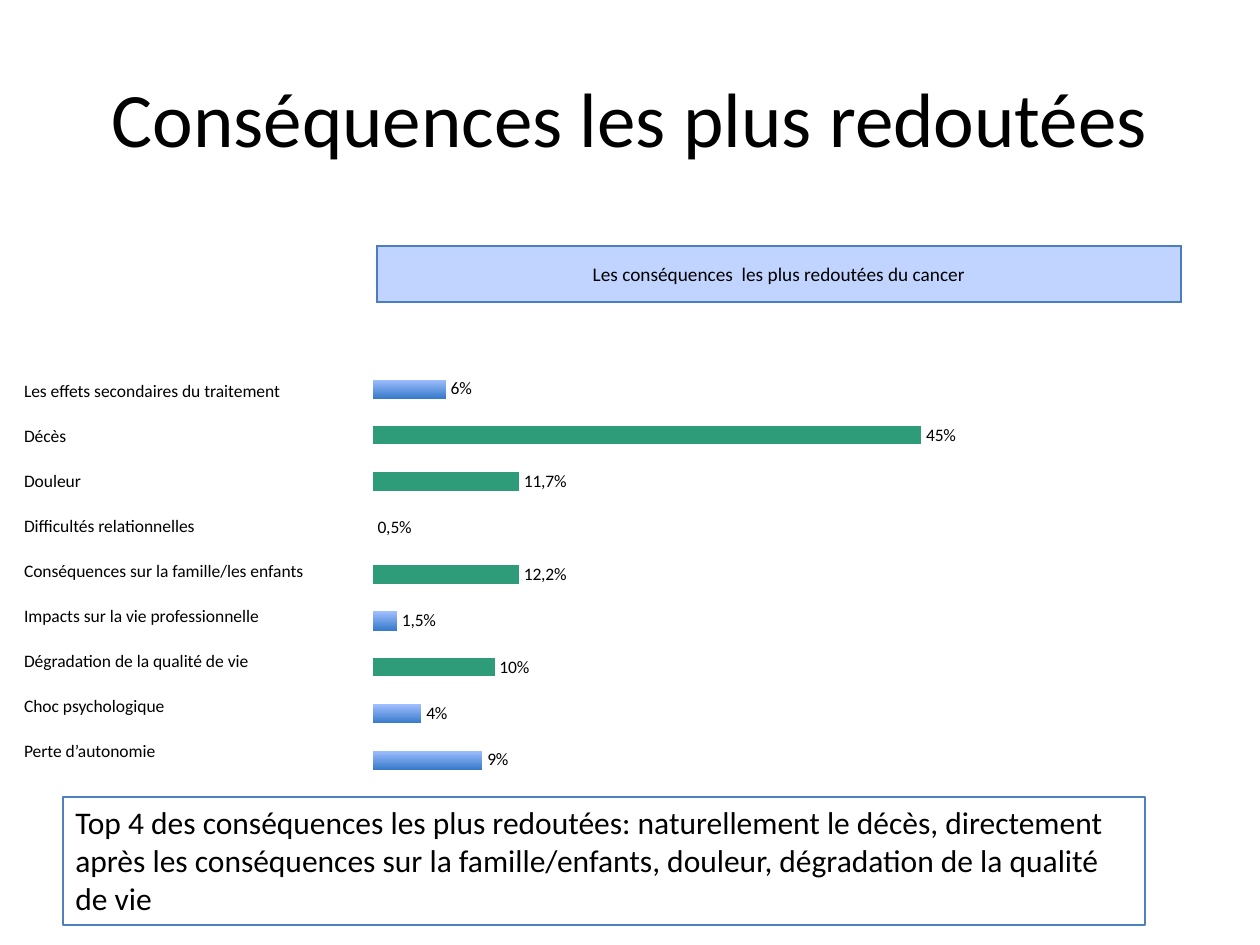
from lxml import etree
from pptx import Presentation
from pptx.chart.data import CategoryChartData
from pptx.dml.color import RGBColor
from pptx.enum.chart import XL_CHART_TYPE, XL_LABEL_POSITION
from pptx.enum.shapes import MSO_SHAPE
from pptx.enum.text import MSO_ANCHOR, PP_ALIGN
from pptx.oxml import parse_xml
from pptx.oxml.ns import qn
from pptx.util import Pt

BARS = XL_CHART_TYPE.BAR_CLUSTERED
OUTSIDE = XL_LABEL_POSITION.OUTSIDE_END
RECT = MSO_SHAPE.RECTANGLE
TOP, MIDDLE, BOTTOM = MSO_ANCHOR.TOP, MSO_ANCHOR.MIDDLE, MSO_ANCHOR.BOTTOM
LEFT, CENTER = PP_ALIGN.LEFT, PP_ALIGN.CENTER

BLACK = RGBColor(0x00, 0x00, 0x00)
WHITE = RGBColor(0xFF, 0xFF, 0xFF)
BLUE = RGBColor(0x4F, 0x81, 0xBD)
EDGE = RGBColor(0x4B, 0x7E, 0xBC)
PALE = RGBColor(0xC0, 0xD4, 0xFF)
GREEN = RGBColor(0x2E, 0x9C, 0x79)
LIGHT = RGBColor(0xA0, 0xBF, 0xFF)
DEEP = RGBColor(0x3A, 0x7C, 0xCB)

FONT = "Calibri"
ROWS = [
    ("Les effets secondaires du traitement", 6, "6%"),
    ("Décès", 45, None),
    ("Douleur", 12, "11,7%"),
    ("Difficultés relationnelles", 0, "0,5%"),
    ("Conséquences sur la famille/les enfants", 12, "12,2%"),
    ("Impacts sur la vie professionnelle", 2, "1,5%"),
    ("Dégradation de la qualité de vie", 10, None),
    ("Choc psychologique", 4, "4%"),
    ("Perte d’autonomie", 9, "9%"),
]
NOTE = (
    "Top 4 des conséquences les plus redoutées: naturellement le décès, "
    "directement après les conséquences sur la famille/enfants, douleur, "
    "dégradation de la qualité de vie"
)


def px(n):
    return round(n * 914400 / 126)


def box(*sides):
    return [px(n) for n in sides]


def assign(item, values):
    for name, value in values.items():
        setattr(item, name, value)


def style(font, size):
    assign(font, {"name": FONT, "size": Pt(size)})
    font.color.rgb = BLACK


def write(frame, text, size, align=LEFT):
    para = frame.paragraphs[0]
    para.alignment = align
    run = para.add_run()
    run.text = text
    style(run.font, size)


def add_title(slide, text):
    frame = slide.shapes.add_textbox(*box(63, 38, 1134, 157)).text_frame
    assign(frame, {"word_wrap": True, "vertical_anchor": MIDDLE})
    write(frame, text, 44, CENTER)


def add_grid(slide, place, texts, size, fill, anchor, align):
    table = slide.shapes.add_table(len(texts), 1, *box(*place)).table
    assign(table, {"first_row": False, "horz_banding": False})
    for row, text in enumerate(texts):
        cell = table.cell(row, 0)
        assign(cell, {
            "margin_left": px(1), "margin_right": px(1),
            "margin_top": px(1), "margin_bottom": 0,
            "vertical_anchor": anchor,
        })
        cell.fill.solid()
        cell.fill.fore_color.rgb = fill
        write(cell.text_frame, text, size, align)
    return table


def add_edges(cell):
    props = cell._tc.get_or_add_tcPr()
    for spot, side in enumerate(("lnL", "lnR", "lnT", "lnB")):
        line = etree.Element(qn(f"a:{side}"), w=str(Pt(0.75)))
        fill = etree.SubElement(line, qn("a:solidFill"))
        etree.SubElement(fill, qn("a:srgbClr"), val=str(EDGE))
        props.insert(spot, line)


def set_plot(chart, **sides):
    uri = "http://schemas.openxmlformats.org/drawingml/2006/chart"
    parts = '<c:layoutTarget val="inner"/><c:xMode val="edge"/><c:yMode val="edge"/>'
    parts += "".join(f'<c:{k} val="{v}"/>' for k, v in sides.items())
    area = chart._chartSpace.chart.plotArea
    for old in area.findall(qn("c:layout")):
        area.remove(old)
    area.insert(0, parse_xml(
        f'<c:layout xmlns:c="{uri}"><c:manualLayout>{parts}</c:manualLayout></c:layout>'))


def paint(fill, value):
    if value >= 10:
        fill.solid()
        fill.fore_color.rgb = GREEN
        return
    fill.gradient()
    fill.gradient_angle = 270
    for stop, color in zip(fill.gradient_stops, (LIGHT, DEEP)):
        stop.color.rgb = color


def add_bars(slide):
    data = CategoryChartData()
    data.categories = [str(n + 1) for n in range(len(ROWS))]
    data.add_series("Series 1", [value for _, value, _ in ROWS])
    chart = slide.shapes.add_chart(BARS, *box(360, 357, 635, 435), data).chart
    assign(chart, {"has_legend": False, "has_title": False})
    style(chart.font, 10)
    assign(chart.category_axis, {"visible": False, "reverse_order": True})
    assign(chart.value_axis, {
        "visible": False, "has_major_gridlines": False,
        "minimum_scale": 0, "maximum_scale": 50,
    })
    set_plot(chart, x=0.02, y=0.02, w=0.96, h=0.96)
    plot = chart.plots[0]
    assign(plot, {"gap_width": 150, "vary_by_categories": False})
    series = plot.series[0]
    assign(series.data_labels, {
        "show_value": True, "number_format": "#,#00\\%",
        "number_format_is_linked": False, "position": OUTSIDE,
    })
    style(series.data_labels.font, 10)
    for spot, (_, value, label) in enumerate(ROWS):
        point = series.points[spot]
        paint(point.format.fill, value)
        if label:
            write(point.data_label.text_frame, label, 10)
            point.data_label.position = OUTSIDE


def add_note(slide, text):
    shape = slide.shapes.add_shape(RECT, *box(63, 797, 1082, 128))
    shape.shadow.inherit = False
    shape.fill.background()
    shape.line.color.rgb = BLUE
    shape.line.width = Pt(0.75)
    assign(shape.text_frame, {"word_wrap": True, "vertical_anchor": TOP})
    write(shape.text_frame, text, 18)


def main():
    deck = Presentation()
    assign(deck, {"slide_width": px(1260), "slide_height": px(945)})
    slide = deck.slides.add_slide(deck.slide_layouts[6])
    add_title(slide, "Conséquences les plus redoutées")
    add_grid(slide, (23, 357, 378, 405), [row[0] for row in ROWS],
             10, WHITE, BOTTOM, LEFT)
    banner = add_grid(slide, (377, 246, 804, 56),
                      ["Les conséquences  les plus redoutées du cancer"],
                      11, PALE, MIDDLE, CENTER)
    add_edges(banner.cell(0, 0))
    add_bars(slide)
    add_note(slide, NOTE)
    deck.save("out.pptx")


if __name__ == "__main__":
    main()
